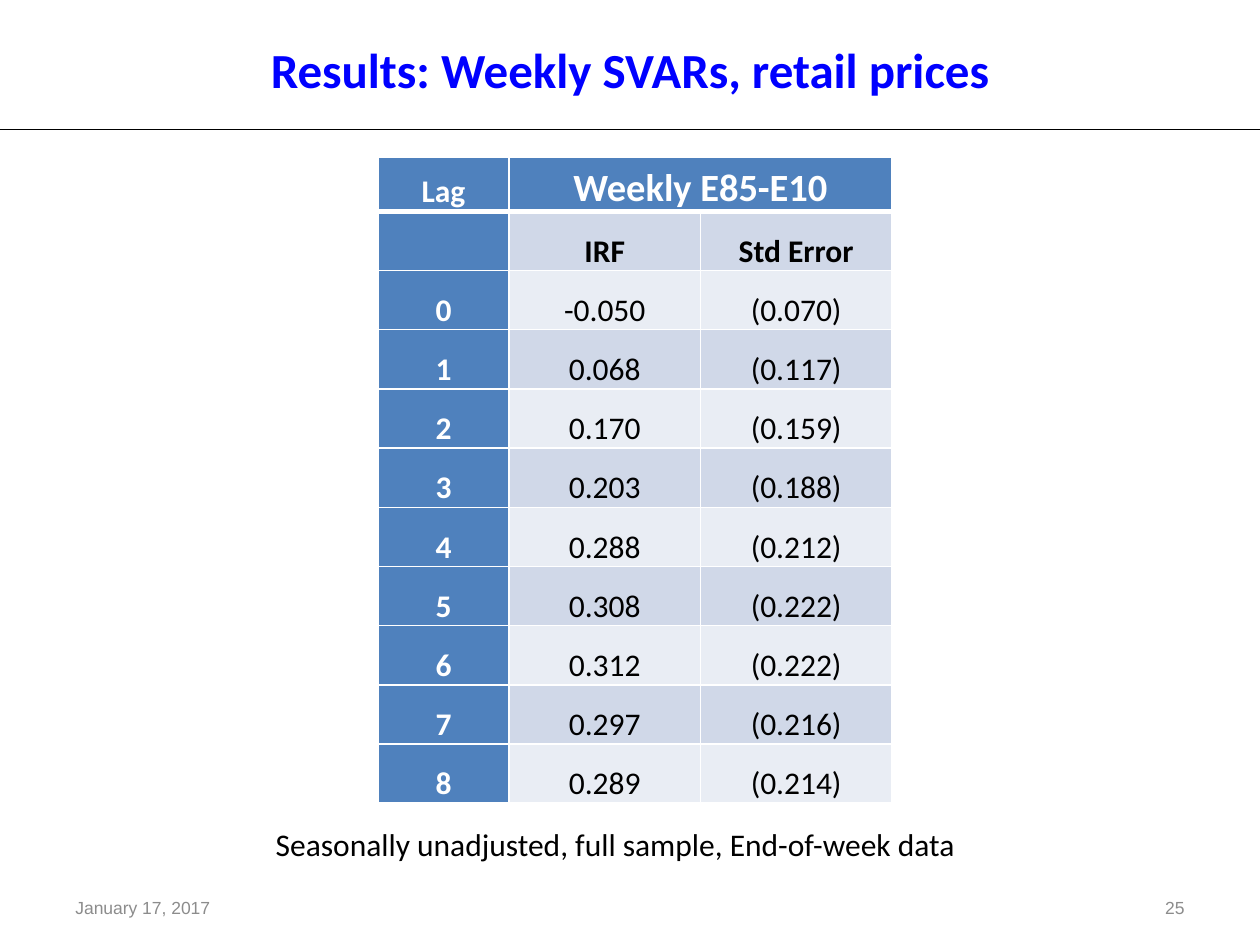
from dataclasses import dataclass

from lxml import etree
from pptx import Presentation
from pptx import util as u
from pptx.dml.color import RGBColor
from pptx.enum import shapes, text
from pptx.oxml import ns

COLORS = {
    "title": "0000FF",
    "black": "000000",
    "white": "FFFFFF",
    "footer": "8C8C8C",
    "header": "4F81BD",
    "dark_band": "D0D8E8",
    "light_band": "E9EDF4",
}
LEFT, CENTER, RIGHT = text.PP_ALIGN.LEFT, text.PP_ALIGN.CENTER, text.PP_ALIGN.RIGHT
TOP, MIDDLE, BOTTOM = text.MSO_ANCHOR.TOP, text.MSO_ANCHOR.MIDDLE, text.MSO_ANCHOR.BOTTOM

COLUMN_WIDTHS = (1.04, 1.52, 1.52)
HEADER_HEIGHT, ROW_HEIGHT = 0.42, 0.47
ROWS = [
    ("Lag", "Weekly E85-E10", ""),
    ("", "IRF", "Std Error"),
    ("0", "-0.050", "(0.070)"),
    ("1", "0.068", "(0.117)"),
    ("2", "0.170", "(0.159)"),
    ("3", "0.203", "(0.188)"),
    ("4", "0.288", "(0.212)"),
    ("5", "0.308", "(0.222)"),
    ("6", "0.312", "(0.222)"),
    ("7", "0.297", "(0.216)"),
    ("8", "0.289", "(0.214)"),
]


@dataclass
class Style:
    size: float
    color: str
    bold: bool = False
    name: str = "Calibri"
    align: text.PP_ALIGN = LEFT
    anchor: text.MSO_ANCHOR = TOP


@dataclass
class Label:
    words: str
    left: float
    top: float
    width: float
    height: float
    style: Style
    wrap: bool = True


LABELS = [
    Label("January 17, 2017", 0.5, 7, 3.5, 0.4,
          Style(10, "footer", name="Arial", anchor=MIDDLE)),
    Label("Results: Weekly SVARs, retail prices", 0, 0.08, 10, 0.75,
          Style(28, "title", bold=True, align=CENTER, anchor=BOTTOM)),
    Label("25", 7.17, 7, 2.33, 0.4,
          Style(10, "footer", name="Arial", align=RIGHT, anchor=MIDDLE)),
    Label("Seasonally unadjusted, full sample, End-of-week data", 2.09, 6.5, 5.66, 0.4,
          Style(18, "black"), wrap=False),
]


def rgb(color: str) -> RGBColor:
    return RGBColor.from_string(COLORS[color])


def write(frame, words: str, style: Style):
    paragraph = frame.paragraphs[0]
    paragraph.text = words
    paragraph.alignment = style.align
    paragraph.font.size = u.Pt(style.size)
    paragraph.font.bold = style.bold
    paragraph.font.name = style.name
    paragraph.font.color.rgb = rgb(style.color)
    return paragraph


def add_label(slide, label: Label) -> None:
    box = slide.shapes.add_textbox(u.Inches(label.left), u.Inches(label.top),
                                   u.Inches(label.width), u.Inches(label.height))
    frame = box.text_frame
    frame.word_wrap = label.wrap
    frame.vertical_anchor = label.style.anchor
    write(frame, label.words, label.style)


def add_rule(slide, y: float) -> None:
    rule = slide.shapes.add_connector(shapes.MSO_CONNECTOR.STRAIGHT, u.Inches(0),
                                      u.Inches(y), u.Inches(10), u.Inches(y))
    rule.line.color.rgb = rgb("black")
    rule.line.width = u.Pt(0.75)
    etree.SubElement(rule._element.spPr, ns.qn("a:effectLst"))


def set_borders(cell, widths: dict[str, float]) -> None:
    properties = cell._tc.get_or_add_tcPr()
    for position, (side, width) in enumerate(widths.items()):
        line = etree.Element(ns.qn(f"a:ln{side}"), w=str(u.Pt(width)))
        fill = etree.SubElement(line, ns.qn("a:solidFill"))
        etree.SubElement(fill, ns.qn("a:srgbClr"), val=COLORS["white"])
        properties.insert(position, line)


def format_cell(cell, words: str, row: int, column: int) -> None:
    is_header = row == 0 or column == 0
    band = "dark_band" if row % 2 else "light_band"
    cell.fill.solid()
    cell.fill.fore_color.rgb = rgb("header" if is_header else band)
    cell.margin_left = cell.margin_right = u.Inches(0.07)
    cell.margin_top = cell.margin_bottom = 0
    cell.vertical_anchor = BOTTOM
    style = Style(22 if row == 0 and column else 18,
                  "white" if is_header else "black",
                  bold=is_header or row == 1, align=CENTER)
    write(cell.text_frame, words, style).line_spacing = 1.15
    set_borders(cell, {"L": 1, "R": 1, "T": 3 if row == 1 else 1, "B": 3 if row == 0 else 1})


def add_results_table(slide) -> None:
    height = HEADER_HEIGHT + ROW_HEIGHT * (len(ROWS) - 1)
    table = slide.shapes.add_table(len(ROWS), len(COLUMN_WIDTHS), u.Inches(3), u.Inches(1.25),
                                   u.Inches(sum(COLUMN_WIDTHS)), u.Inches(height)).table
    table.first_col = True
    for column, width in zip(table.columns, COLUMN_WIDTHS):
        column.width = u.Inches(width)
    for index, row in enumerate(table.rows):
        row.height = u.Inches(ROW_HEIGHT if index else HEADER_HEIGHT)
    table.cell(0, 1).merge(table.cell(0, 2))
    for row, values in enumerate(ROWS):
        for column, words in enumerate(values):
            format_cell(table.cell(row, column), words, row, column)


def main() -> None:
    presentation = Presentation()
    presentation.slide_width = u.Inches(10)
    presentation.slide_height = u.Inches(7.5)
    slide = presentation.slides.add_slide(presentation.slide_layouts[6])
    add_rule(slide, 1.03)
    add_results_table(slide)
    for label in LABELS:
        add_label(slide, label)
    presentation.save("out.pptx")


if __name__ == "__main__":
    main()
